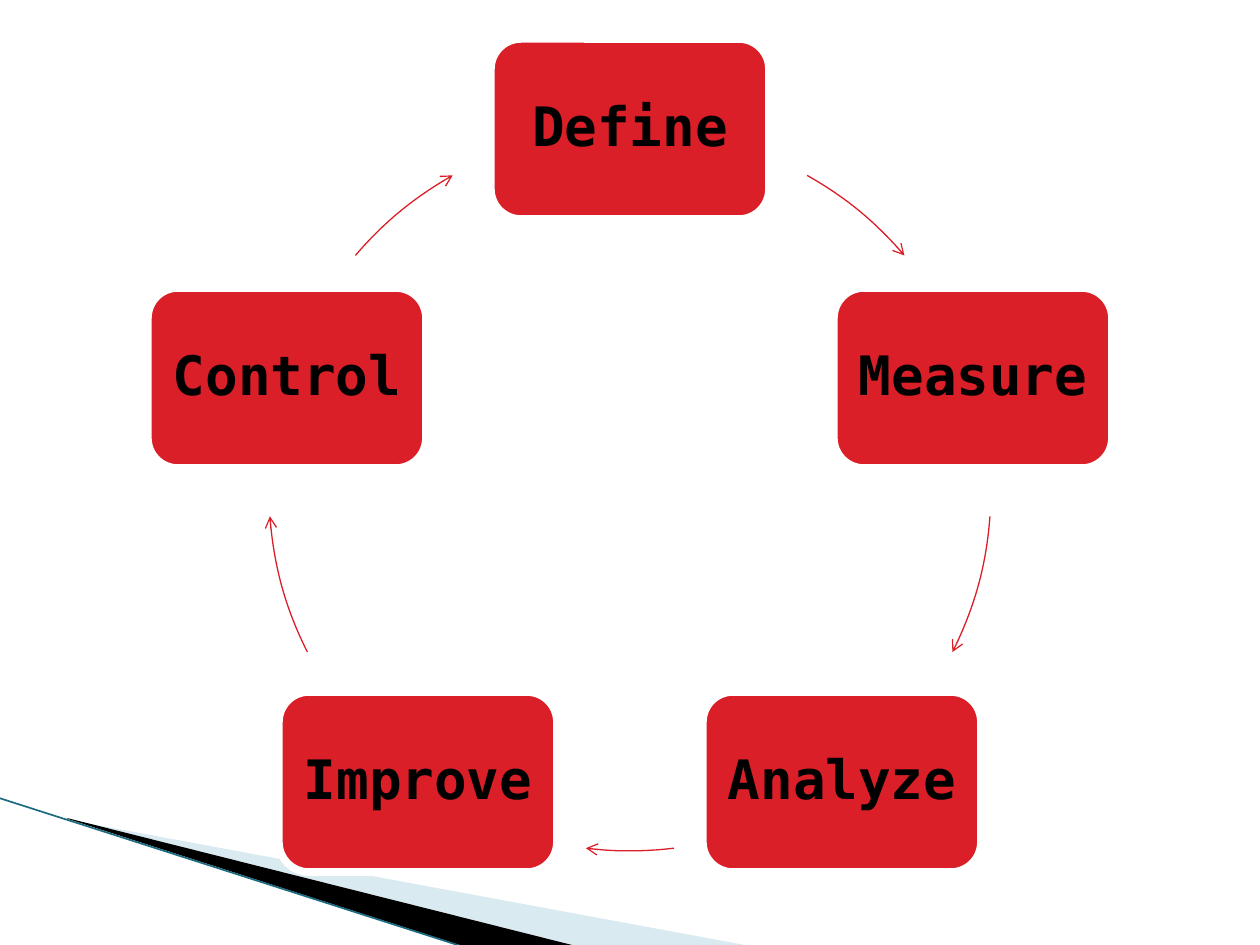
from math import cos, radians, sin

from lxml.etree import SubElement
from pptx import Presentation
from pptx.dml.color import RGBColor
from pptx.enum.shapes import MSO_CONNECTOR as Connector, MSO_SHAPE as Shape
from pptx.enum.text import MSO_ANCHOR as Anchor, PP_ALIGN as Align
from pptx.oxml.ns import qn
from pptx.util import Emu, Pt

PX = 914400 // 126
RED = RGBColor(0xDA, 0x1F, 0x28)
WHITE = RGBColor(0xFF, 0xFF, 0xFF)
BLACK = RGBColor(0x00, 0x00, 0x00)
PALE_BLUE = RGBColor(0xA0, 0xCB, 0xDC)
TEAL = RGBColor(0x1B, 0x6B, 0x80)

CENTER_X, CENTER_Y, RADIUS = 630, 490, 361
STEP_WIDTH, STEP_HEIGHT = 278, 180
STEPS = ["Define", "Measure", "Analyze", "Improve", "Control"]
# Start and end of the arrow after each step, in degrees clockwise from east
ARROW_ANGLES = [(299.4, 319.5), (4.2, 26.7), (83, 97), (153.3, 175.8), (220.5, 240.6)]


def px(length):
    return Emu(round(length) * PX)


def add_wedge(page, points, color, opacity=100):
    start, *others = points
    builder = page.shapes.build_freeform(*start, scale=PX)
    builder.add_line_segments(others, close=True)
    wedge = builder.convert_to_shape()
    wedge.shadow.inherit = False
    wedge.fill.solid()
    wedge.fill.fore_color.rgb = color
    wedge.line.fill.background()
    if opacity < 100:
        tint = wedge.fill._xPr.find(qn("a:solidFill"))[0]
        SubElement(tint, qn("a:alpha"), val=str(opacity * 1000))


def add_line(page, start, end, color, width):
    line = page.shapes.add_connector(Connector.STRAIGHT, *map(px, start + end))
    line.line.color.rgb = color
    line.line.width = Pt(width)
    SubElement(line._element.spPr, qn("a:effectLst"))


def write_text(shape, text, *, font, size, color, bold=False):
    frame = shape.text_frame
    frame.word_wrap = False
    frame.vertical_anchor = Anchor.MIDDLE
    para = frame.paragraphs[0]
    para.alignment = Align.CENTER
    para.line_spacing = 0.9
    span = para.add_run()
    span.text = text
    span.font.name = font
    span.font.size = Pt(size)
    span.font.bold = bold
    span.font.color.rgb = color


def add_step(page, label, angle):
    """Place a rounded box on the ring at an angle in degrees."""
    left = CENTER_X + RADIUS * cos(radians(angle)) - STEP_WIDTH / 2
    top = CENTER_Y + RADIUS * sin(radians(angle)) - STEP_HEIGHT / 2
    box = page.shapes.add_shape(
        Shape.ROUNDED_RECTANGLE, px(left), px(top), px(STEP_WIDTH), px(STEP_HEIGHT))
    box.shadow.inherit = False
    box.fill.solid()
    box.fill.fore_color.rgb = RED
    box.line.color.rgb = WHITE
    box.line.width = Pt(4.33)
    write_text(box, label, font="DejaVu Sans Mono", size=31, color=BLACK, bold=True)


def add_ring_arrow(page, start, end):
    arc = page.shapes.add_shape(
        Shape.ARC, px(CENTER_X - RADIUS), px(CENTER_Y - RADIUS),
        px(2 * RADIUS), px(2 * RADIUS))
    # Angles are stored in 60000ths of a degree, adjustments in 100000ths
    arc.adjustments[0] = start * 0.6
    arc.adjustments[1] = end * 0.6
    arc.shadow.inherit = False
    arc.fill.background()
    arc.line.color.rgb = RED
    arc.line.width = Pt(0.75)
    SubElement(arc.line._get_or_add_ln(), qn("a:tailEnd"), type="arrow")


def main():
    deck = Presentation()
    deck.slide_width, deck.slide_height = px(1260), px(945)
    page = deck.slides.add_slide(deck.slide_layouts[6])

    add_wedge(page, [(69, 820), (750, 946), (575, 946), (69, 819)], PALE_BLUE, opacity=40)
    add_wedge(page, [(67, 818), (576, 946), (469, 948), (68, 819)], BLACK)
    add_line(page, (-1, 798), (467, 948), TEAL, 0.95)

    for index, (label, angles) in enumerate(zip(STEPS, ARROW_ANGLES)):
        add_step(page, label, index * 360 / len(STEPS) - 90)
        add_ring_arrow(page, *angles)

    deck.save("out.pptx")


if __name__ == "__main__":
    main()
